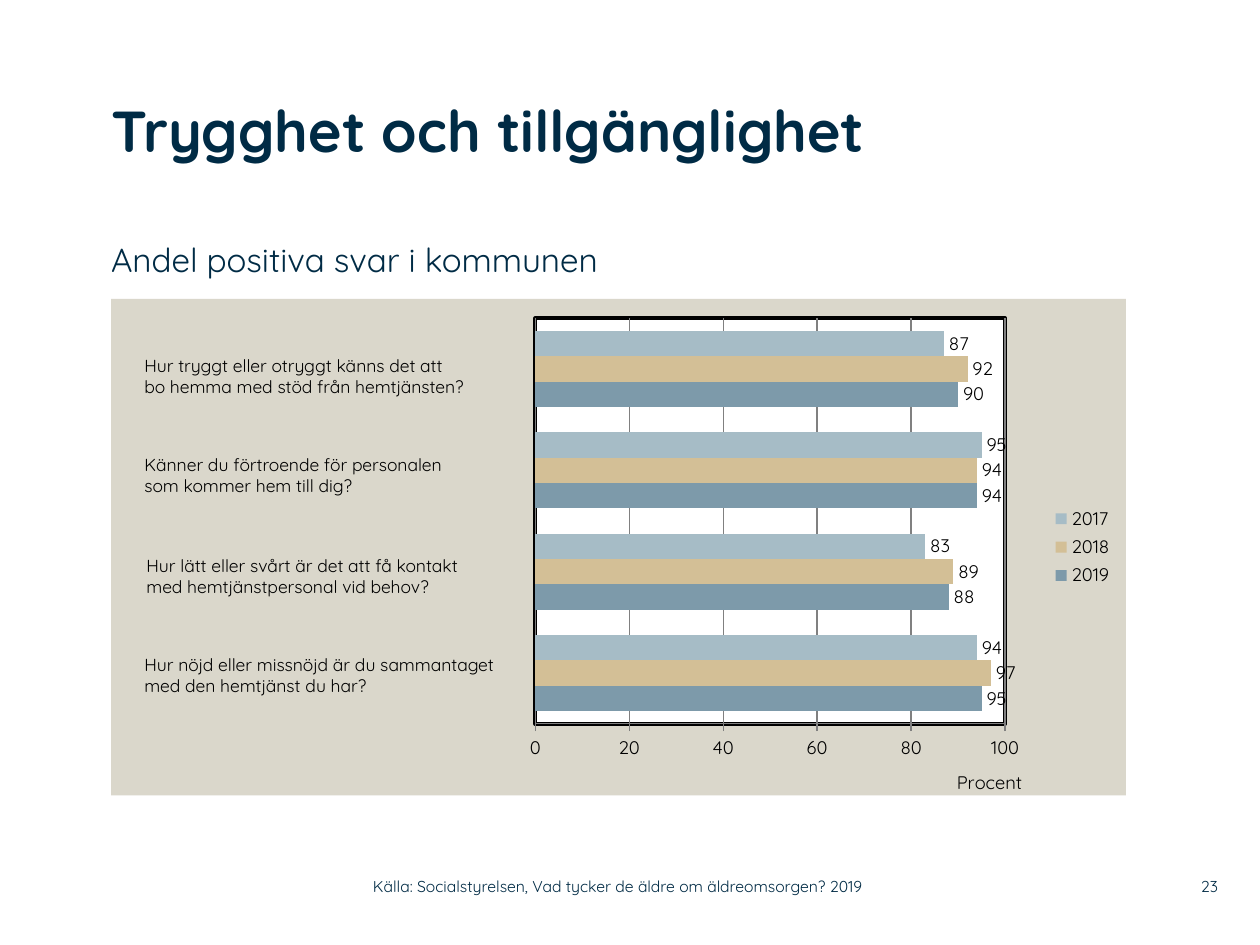
from lxml import etree
from pptx import Presentation
from pptx.chart.data import CategoryChartData
from pptx.dml.color import RGBColor
from pptx.enum.chart import XL_CHART_TYPE, XL_LABEL_POSITION, XL_LEGEND_POSITION, XL_TICK_MARK
from pptx.enum.text import MSO_ANCHOR, PP_ALIGN
from pptx.oxml import parse_xml
from pptx.oxml.ns import nsdecls, qn
from pptx.util import Inches, Pt

PX = Inches(1) / 126
FONT = "Quicksand"
COLORS = {
    "navy": "002B45",
    "black": "000000",
    "panel": "DAD7CB",
    "plot": "FFFFFF",
    "grid": "808080",
    "2019": "7D9AAA",
    "2018": "D3BF96",
    "2017": "A6BCC6",
}

deck = Presentation()
deck.slide_width = int(1260 * PX)
deck.slide_height = int(945 * PX)
page = deck.slides.add_slide(deck.slide_layouts[6])


def add_text(text, left, top, width, height, size, color="navy", bold=False,
             align=PP_ALIGN.LEFT, anchor=MSO_ANCHOR.TOP, inset=(0, 0)):
    box = page.shapes.add_textbox(*(int(n * PX) for n in (left, top, width, height)))
    frame = box.text_frame
    frame.word_wrap = True
    frame.vertical_anchor = anchor
    frame.margin_left = frame.margin_right = Pt(inset[0])
    frame.margin_top = frame.margin_bottom = Pt(inset[1])
    para = frame.paragraphs[0]
    para.text = text
    para.alignment = align
    para.font.name = FONT
    para.font.size = Pt(size)
    para.font.bold = bold
    para.font.color.rgb = RGBColor.from_string(COLORS[color])


def set_layout(parent, index, inner=False, **values):
    for old in parent.findall(qn("c:layout")):
        parent.remove(old)
    layout = etree.Element(qn("c:layout"))
    manual = etree.SubElement(layout, qn("c:manualLayout"))
    if inner:
        etree.SubElement(manual, qn("c:layoutTarget")).set("val", "inner")
    for name in ("xMode", "yMode"):
        etree.SubElement(manual, qn(f"c:{name}")).set("val", "edge")
    for name, value in values.items():
        etree.SubElement(manual, qn(f"c:{name}")).set("val", str(value))
    parent.insert(index, layout)


add_text("Trygghet och tillgänglighet", 111, 95, 1053, 179, 33, bold=True)
add_text("Andel positiva svar i kommunen", 111, 239, 873, 57, 19)

data = CategoryChartData()
data.categories = ["1", "2", "3", "4"]
data.add_series("2019", (95, 88, 94, 90))
data.add_series("2018", (97, 89, 94, 92))
data.add_series("2017", (94, 83, 95, 87))
chart = page.shapes.add_chart(
    XL_CHART_TYPE.BAR_CLUSTERED,
    *(int(n * PX) for n in (111, 299, 1015, 501)), data).chart
chart.has_title = False
chart.font.name = FONT
chart.font.size = Pt(10.5)
chart.font.color.rgb = RGBColor.from_string(COLORS["black"])
chart.has_legend = True
chart.legend.position = XL_LEGEND_POSITION.RIGHT
chart.legend.include_in_layout = False
chart.legend.font.name = FONT
chart.legend.font.size = Pt(10.5)

bars = chart.plots[0]
bars.gap_width = 100
bars.overlap = 0
bars.vary_by_categories = False
for series in bars.series:
    series.format.fill.solid()
    series.format.fill.fore_color.rgb = RGBColor.from_string(COLORS[series.name])
    labels = series.data_labels
    labels.show_value = True
    labels.position = XL_LABEL_POSITION.OUTSIDE_END
    labels.font.name = FONT
    labels.font.size = Pt(10.5)

chart.category_axis.visible = False
percent_axis = chart.value_axis
percent_axis.minimum_scale = 0
percent_axis.maximum_scale = 100
percent_axis.major_unit = 20
percent_axis.major_tick_mark = XL_TICK_MARK.OUTSIDE
percent_axis.has_major_gridlines = True
for line in (percent_axis.format.line, percent_axis.major_gridlines.format.line):
    line.width = Pt(0.75)
    line.color.rgb = RGBColor.from_string(COLORS["grid"])
percent_axis.tick_labels.font.name = FONT
percent_axis.tick_labels.font.size = Pt(10.5)
title = percent_axis.axis_title
title.text_frame.text = "Procent"
title_font = title.text_frame.paragraphs[0].runs[0].font
title_font.name = FONT
title_font.size = Pt(10.5)
title_font.bold = False
set_layout(title._element, 1, x=0.83, y=0.94)

chart_space = chart._chartSpace
plot_area = chart_space.find(f".//{qn('c:plotArea')}")
set_layout(plot_area, 0, inner=True, x=0.418, y=0.039, w=0.463, h=0.817)
fill = '<a:solidFill><a:srgbClr val="{}"/></a:solidFill>'
plot_area.append(parse_xml(
    f'<c:spPr {nsdecls("c", "a")}>{fill.format(COLORS["plot"])}'
    f'<a:ln w="{Pt(2.25)}">{fill.format(COLORS["black"])}</a:ln></c:spPr>'))
chart_space.find(qn("c:chart")).addnext(parse_xml(
    f'<c:spPr {nsdecls("c", "a")}>{fill.format(COLORS["panel"])}'
    '<a:ln><a:noFill/></a:ln></c:spPr>'))

questions = [
    ("Hur tryggt eller otryggt känns det att\vbo hemma med stöd från hemtjänsten?", 132, 349, 378, 55),
    ("Känner du förtroende för personalen\vsom kommer hem till dig?", 132, 448, 370, 55),
    ("Hur lätt eller svårt är det att få kontakt\vmed hemtjänstpersonal vid behov?", 134, 549, 372, 55),
    ("Hur nöjd eller missnöjd är du sammantaget med den hemtjänst du har?", 132, 648, 375, 77),
]
for text, *place in questions:
    add_text(text, *place, 10, color="black", inset=(7.2, 3.6))

add_text("23", 1159, 868, 59, 37, 9, align=PP_ALIGN.RIGHT, anchor=MSO_ANCHOR.MIDDLE)
add_text("Källa: Socialstyrelsen, Vad tycker de äldre om äldreomsorgen? 2019",
         373, 868, 558, 37, 9, anchor=MSO_ANCHOR.MIDDLE)

deck.save("out.pptx")
